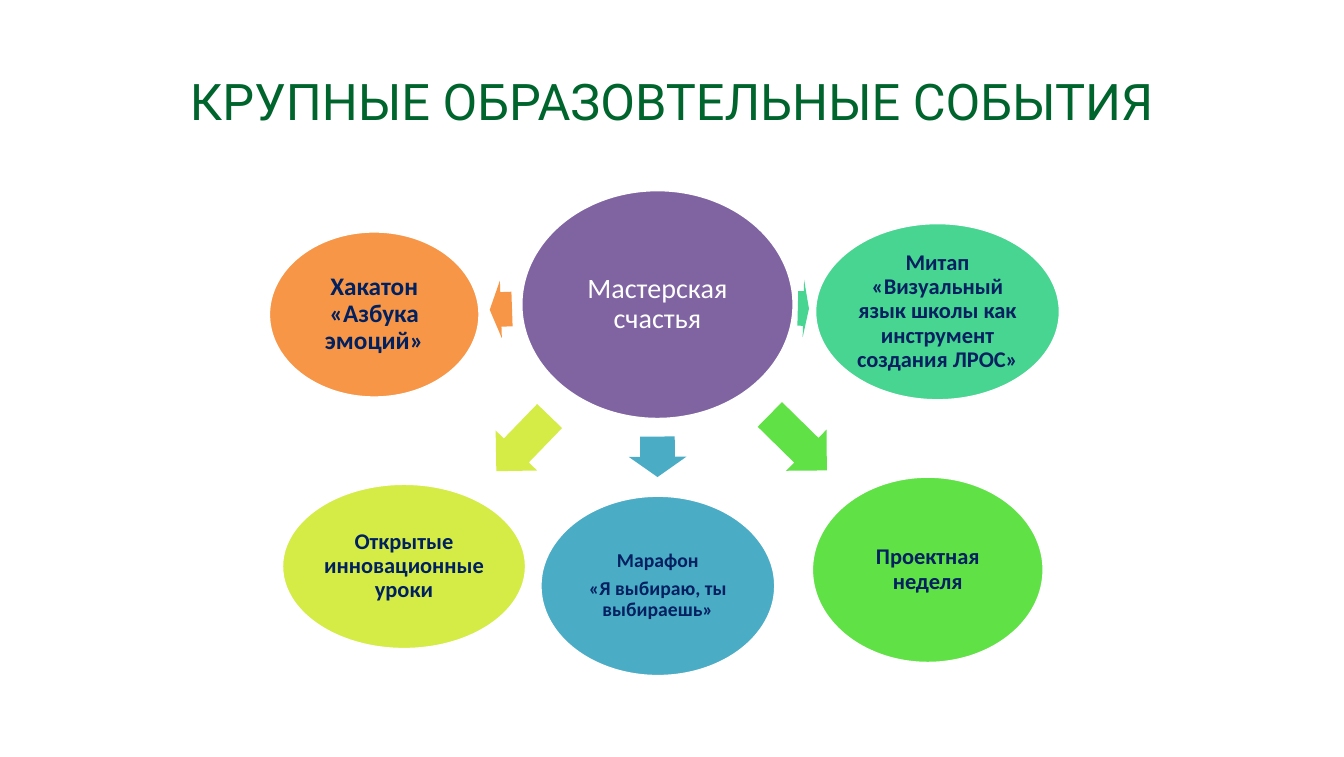
"""Build the slide of major educational events around a central workshop."""
from dataclasses import dataclass
from typing import Optional

from pptx import Presentation
from pptx.dml.color import RGBColor
from pptx.enum import shapes, text
from pptx.util import Cm, Pt

COLORS = {
    "title": "00642D",
    "white": "FFFFFF",
    "navy": "002060",
    "purple": "8064A2",
    "blue": "4BACC6",
    "mint": "48D491",
    "green": "60E146",
    "lime": "D5EC46",
    "orange": "F79646",
}
SLIDE_WIDTH, SLIDE_HEIGHT = 33.81, 19.05
ARROW_HEIGHT = 1.45


@dataclass
class Arrow:
    """Place, length in cm and rotation in degrees of an arrow."""
    left: float
    top: float
    length: float
    rotation: float


@dataclass
class Event:
    """An ellipse with its lines of text and the arrow that leads to it."""
    lines: list[str]
    left: float
    top: float
    width: float
    height: float
    color: str
    size: int
    arrow: Optional[Arrow] = None
    text_color: str = "navy"
    bold: bool = True


EVENTS = [
    Event(["Мастерская счастья"], 13.11, 4.78, 6.86, 5.77, "purple", 20,
          text_color="white", bold=False),
    Event(["Марафон", "«Я выбираю, ты выбираешь»"], 13.59, 12.47, 5.92, 4.55,
          "blue", 14, Arrow(16.03, 10.77, 1.02, 89.9)),
    Event(["Митап «Визуальный язык школы как инструмент создания ЛРОС»"],
          20.5, 5.61, 6.17, 4.47, "mint", 16, Arrow(20.07, 7.04, 0.28, 1.4)),
    Event(["Проектная неделя"], 20.42, 11.99, 5.84, 4.7,
          "green", 16, Arrow(19.08, 10.41, 2.01, 44.5)),
    Event(["Открытые инновационные уроки"], 7.09, 12.17, 6.15, 4.17,
          "lime", 16, Arrow(12.19, 10.44, 1.93, 134)),
    Event(["Хакатон «Азбука эмоций»"], 6.76, 5.82, 5.31, 4.19,
          "orange", 18, Arrow(12.32, 7.06, 0.56, 178)),
]


def rgb(name: str) -> RGBColor:
    """Return the named colour."""
    return RGBColor.from_string(COLORS[name])


def set_frame(frame, anchor, inset: float) -> None:
    """Set wrapping, anchor and equal insets of a text frame."""
    frame.word_wrap = True
    frame.auto_size = text.MSO_AUTO_SIZE.NONE
    frame.vertical_anchor = anchor
    frame.margin_left = frame.margin_right = Cm(inset)
    frame.margin_top = frame.margin_bottom = Cm(inset)


def write(paragraph, content: str, font: str, size: int, color: str, bold: bool) -> None:
    """Write one centred run into a paragraph."""
    paragraph.alignment = text.PP_ALIGN.CENTER
    paragraph.line_spacing = 0.9
    run = paragraph.add_run()
    run.text = content
    run.font.name = font
    run.font.size = Pt(size)
    run.font.bold = bold
    run.font.color.rgb = rgb(color)


def add_filled(slide, kind, left: float, top: float, width: float, height: float, color: str):
    """Add a preset shape with a solid fill and no shadow."""
    shape = slide.shapes.add_shape(kind, Cm(left), Cm(top), Cm(width), Cm(height))
    shape.shadow.inherit = False
    shape.fill.solid()
    shape.fill.fore_color.rgb = rgb(color)
    return shape


def add_arrow(slide, arrow: Arrow, color: str) -> None:
    """Draw a rotated block arrow."""
    shape = add_filled(slide, shapes.MSO_SHAPE.RIGHT_ARROW, arrow.left, arrow.top,
                       arrow.length, ARROW_HEIGHT, color)
    shape.adjustments[0] = 0.6
    shape.adjustments[1] = 0.5
    shape.rotation = arrow.rotation
    shape.line.fill.background()


def add_event(slide, event: Event) -> None:
    """Draw an event with its arrow."""
    if event.arrow:
        add_arrow(slide, event.arrow, event.color)
    ellipse = add_filled(slide, shapes.MSO_SHAPE.OVAL, event.left, event.top,
                         event.width, event.height, event.color)
    ellipse.line.color.rgb = rgb("white")
    ellipse.line.width = Pt(2)
    frame = ellipse.text_frame
    set_frame(frame, text.MSO_ANCHOR.MIDDLE, 0.06)
    for index, line in enumerate(event.lines):
        paragraph = frame.add_paragraph() if index else frame.paragraphs[0]
        paragraph.space_after = Pt(0.35 * event.size)
        write(paragraph, line, "Calibri", event.size, event.text_color, event.bold)


def add_title(slide) -> None:
    """Place and format the title placeholder."""
    title = slide.shapes.title
    title.left, title.top = Cm(0), Cm(1.93)
    title.width, title.height = Cm(SLIDE_WIDTH), Cm(1.4)
    set_frame(title.text_frame, text.MSO_ANCHOR.TOP, 0)
    write(title.text_frame.paragraphs[0], "КРУПНЫЕ ОБРАЗОВТЕЛЬНЫЕ СОБЫТИЯ",
          "Roboto", 36, "title", False)


def main() -> None:
    """Build and save the presentation."""
    presentation = Presentation()
    presentation.slide_width = Cm(SLIDE_WIDTH)
    presentation.slide_height = Cm(SLIDE_HEIGHT)
    slide = presentation.slides.add_slide(presentation.slide_layouts[5])
    add_title(slide)
    for event in EVENTS:
        add_event(slide, event)
    presentation.save("out.pptx")


if __name__ == "__main__":
    main()
